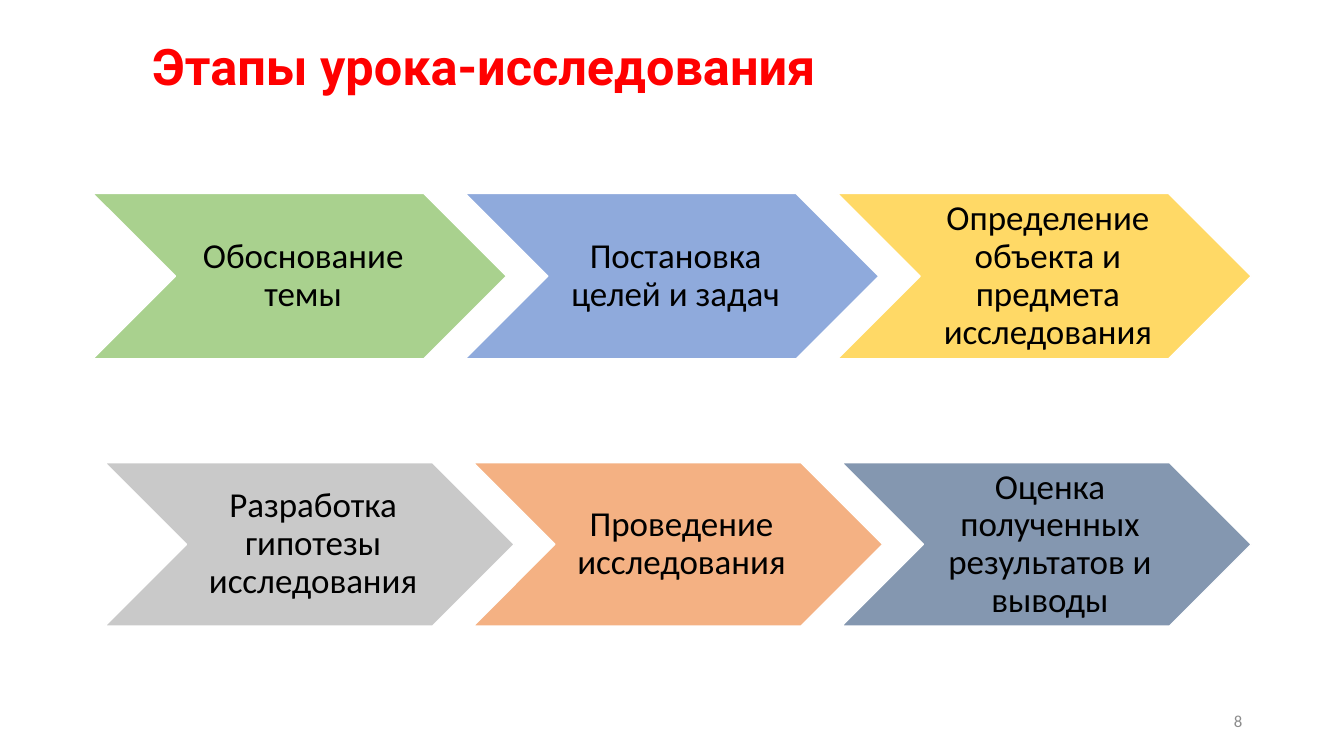
from pptx import Presentation
from pptx import util as u
from pptx.dml.color import RGBColor
from pptx.enum import shapes, text

COLORS = {
    "title": "FF0000", "text": "000000", "number": "8C8C8C", "outline": "FFFFFF",
    "green": "A9D18E", "blue": "8FAADC", "yellow": "FFD966",
    "grey": "C9C9C9", "orange": "F4B183", "slate": "8497B0",
}
FIRST_STAGES = [
    ("Обоснование темы", "green"),
    ("Постановка целей и задач", "blue"),
    ("Определение объекта и предмета исследования", "yellow"),
]
LAST_STAGES = [
    ("Разработка гипотезы исследования", "grey"),
    ("Проведение исследования", "orange"),
    ("Оценка полученных результатов и выводы", "slate"),
]
STEP = 0.9  # distance between chevrons as a share of their width


def color(name):
    return RGBColor.from_string(COLORS[name])


def write(sp, content, size, color_name, align, font="Calibri", bold=False):
    tf = sp.text_frame
    tf.text = content
    tf.word_wrap = True
    tf.auto_size = text.MSO_AUTO_SIZE.NONE
    tf.vertical_anchor = text.MSO_ANCHOR.MIDDLE
    p = tf.paragraphs[0]
    p.alignment = align
    f = p.runs[0].font
    f.name, f.size, f.bold = font, u.Pt(size), bold
    f.color.rgb = color(color_name)
    return tf


def add_title(slide, left, top, width, height):
    sp = slide.shapes.title
    sp.left, sp.top, sp.width, sp.height = map(u.Inches, (left, top, width, height))
    tf = write(sp, "Этапы урока-исследования", 36, "title",
               text.PP_ALIGN.LEFT, "Roboto", True)
    tf.paragraphs[0].line_spacing = 0.9


def add_stage_row(slide, stages, left, top, width, height):
    """Fill the box with overlapping chevrons of equal size."""
    chevron_width = width / (1 + STEP * (len(stages) - 1))
    for i, (label, fill) in enumerate(stages):
        sp = slide.shapes.add_shape(
            shapes.MSO_SHAPE.CHEVRON, u.Inches(left + i * STEP * chevron_width),
            u.Inches(top), u.Inches(chevron_width), u.Inches(height))
        sp.shadow.inherit = False
        sp.fill.solid()
        sp.fill.fore_color.rgb = color(fill)
        sp.line.color.rgb = color("outline")
        sp.line.width = u.Pt(1)
        tf = write(sp, label, 25, "text", text.PP_ALIGN.CENTER)
        tf.paragraphs[0].line_spacing = 0.9
        tf.margin_left = u.Inches(0.11)
        tf.margin_top = tf.margin_right = tf.margin_bottom = u.Inches(0.04)


def add_slide_number(slide, left, top, width, height):
    sp = slide.shapes.add_textbox(*map(u.Inches, (left, top, width, height)))
    write(sp, "8", 12, "number", text.PP_ALIGN.RIGHT)


def main():
    prs = Presentation()
    prs.slide_width, prs.slide_height = u.Inches(13.33), u.Inches(7.5)
    slide = prs.slides.add_slide(prs.slide_layouts[5])
    add_title(slide, 1.41, 0.17, 11.01, 1.03)
    add_stage_row(slide, FIRST_STAGES, 0.92, 1.92, 11.49, 1.64)
    add_stage_row(slide, LAST_STAGES, 1.04, 4.59, 11.37, 1.62)
    add_slide_number(slide, 9.42, 6.95, 3, 0.4)
    prs.save("out.pptx")


if __name__ == "__main__":
    main()
